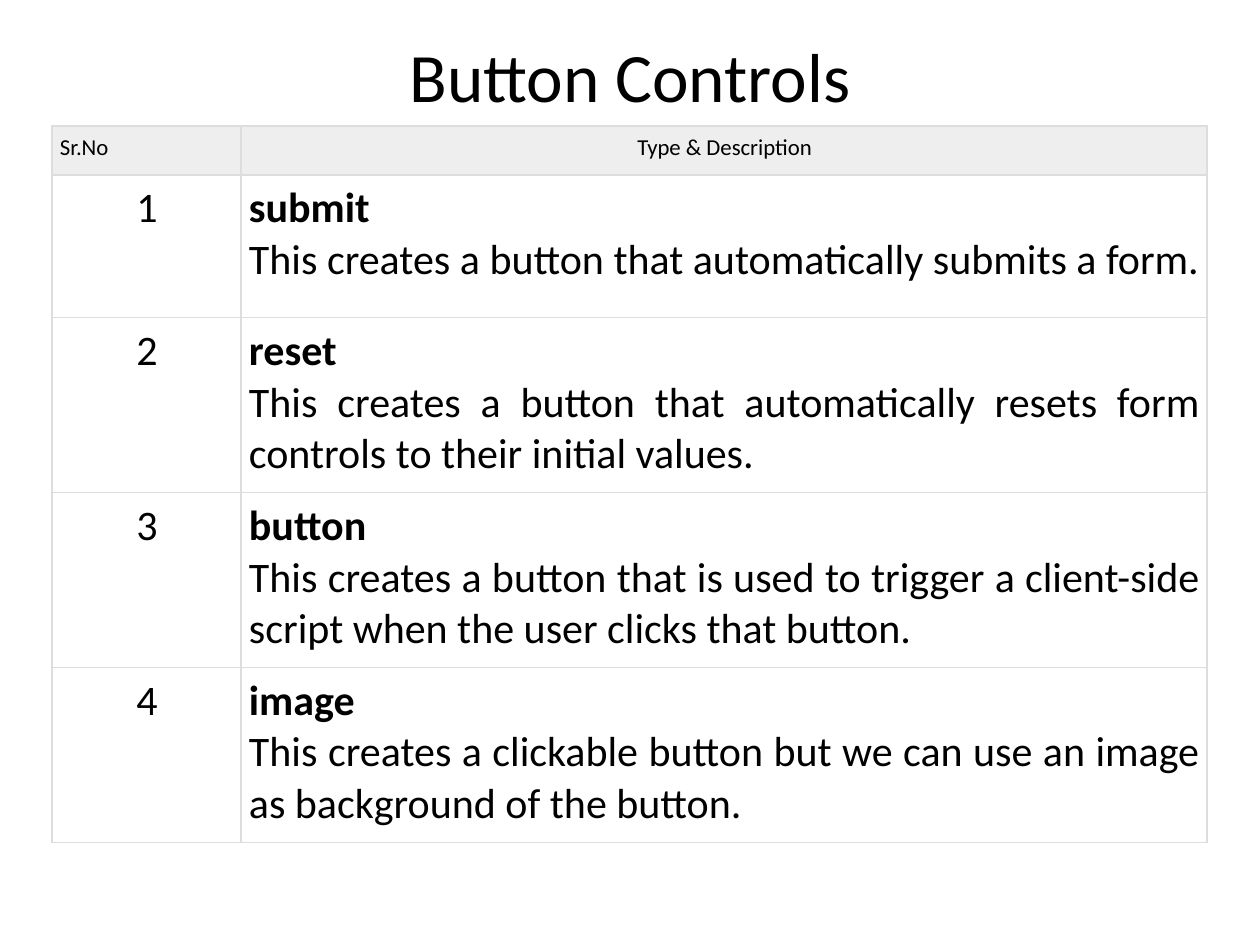
from pptx import Presentation
from pptx.dml.color import RGBColor
from pptx.enum.text import MSO_ANCHOR, PP_ALIGN
from pptx.oxml import parse_xml
from pptx.util import Pt

LEFT, CENTER, JUSTIFY = PP_ALIGN.LEFT, PP_ALIGN.CENTER, PP_ALIGN.JUSTIFY
TOP = MSO_ANCHOR.TOP
NS = "http://schemas.openxmlformats.org/drawingml/2006/main"

TITLE = "Button Controls"
HEADERS = [("Sr.No", LEFT), ("Type & Description", CENTER)]
CONTROLS = [
    ("submit", "This creates a button that automatically submits a form."),
    ("reset", "This creates a button that automatically resets form controls to their initial values."),
    ("button", "This creates a button that is used to trigger a client-side script when the user clicks that button."),
    ("image", "This creates a clickable button but we can use an image as background of the button."),
]
COL_WIDTHS = [189, 966]
ROW_HEIGHTS = [49, 143, 175, 175, 175]
INSET, RIGHT_INSET = 8, 7
FONT, BLACK, BORDER, HEADER_FILL = "Calibri", "000000", "DDDDDD", "EEEEEE"


def px(n):
    return round(n * 914400 / 126)


def color(value):
    return RGBColor.from_string(value)


def write(tf, paragraphs, size, align):
    for i, (text, bold) in enumerate(paragraphs):
        p = tf.add_paragraph() if i else tf.paragraphs[0]
        p.alignment = align
        r = p.add_run()
        r.text = text
        r.font.name, r.font.size, r.font.bold = FONT, Pt(size), bold
        r.font.color.rgb = color(BLACK)


def set_borders(cell):
    tcPr = cell._tc.get_or_add_tcPr()
    for i, side in enumerate("LRTB"):
        ln = parse_xml(
            f'<a:ln{side} xmlns:a="{NS}" w="{Pt(0.75)}"><a:solidFill>'
            f'<a:srgbClr val="{BORDER}"/></a:solidFill></a:ln{side}>')
        tcPr.insert(i, ln)


def fill_cell(cell, paragraphs, size, align, fill=None):
    cell.margin_left = cell.margin_top = cell.margin_bottom = px(INSET)
    cell.margin_right = px(RIGHT_INSET)
    cell.vertical_anchor = TOP
    if fill:
        cell.fill.solid()
        cell.fill.fore_color.rgb = color(fill)
    else:
        cell.fill.background()
    set_borders(cell)
    write(cell.text_frame, paragraphs, size, align)


def main():
    prs = Presentation()
    prs.slide_width, prs.slide_height = px(1260), px(945)
    s = prs.slides.add_slide(prs.slide_layouts[6])

    tf = s.shapes.add_textbox(px(63), px(33), px(1134), px(158)).text_frame
    tf.word_wrap = True
    tf.vertical_anchor = TOP
    tf.margin_top = tf.margin_bottom = 0
    write(tf, [(TITLE, False)], 39.6, CENTER)

    table = s.shapes.add_table(
        len(ROW_HEIGHTS), len(COL_WIDTHS), px(52), px(126),
        px(sum(COL_WIDTHS)), px(sum(ROW_HEIGHTS))).table
    table.first_row = table.horz_banding = False
    for col, width in zip(table.columns, COL_WIDTHS):
        col.width = px(width)
    for row, height in zip(table.rows, ROW_HEIGHTS):
        row.height = px(height)

    for c, (text, align) in enumerate(HEADERS):
        fill_cell(table.cell(0, c), [(text, False)], 13, align, HEADER_FILL)
    for n, (name, description) in enumerate(CONTROLS, 1):
        fill_cell(table.cell(n, 0), [(str(n), False)], 24, CENTER)
        fill_cell(table.cell(n, 1), [(name, True), (description, False)], 24, JUSTIFY)

    prs.save("out.pptx")


if __name__ == "__main__":
    main()
